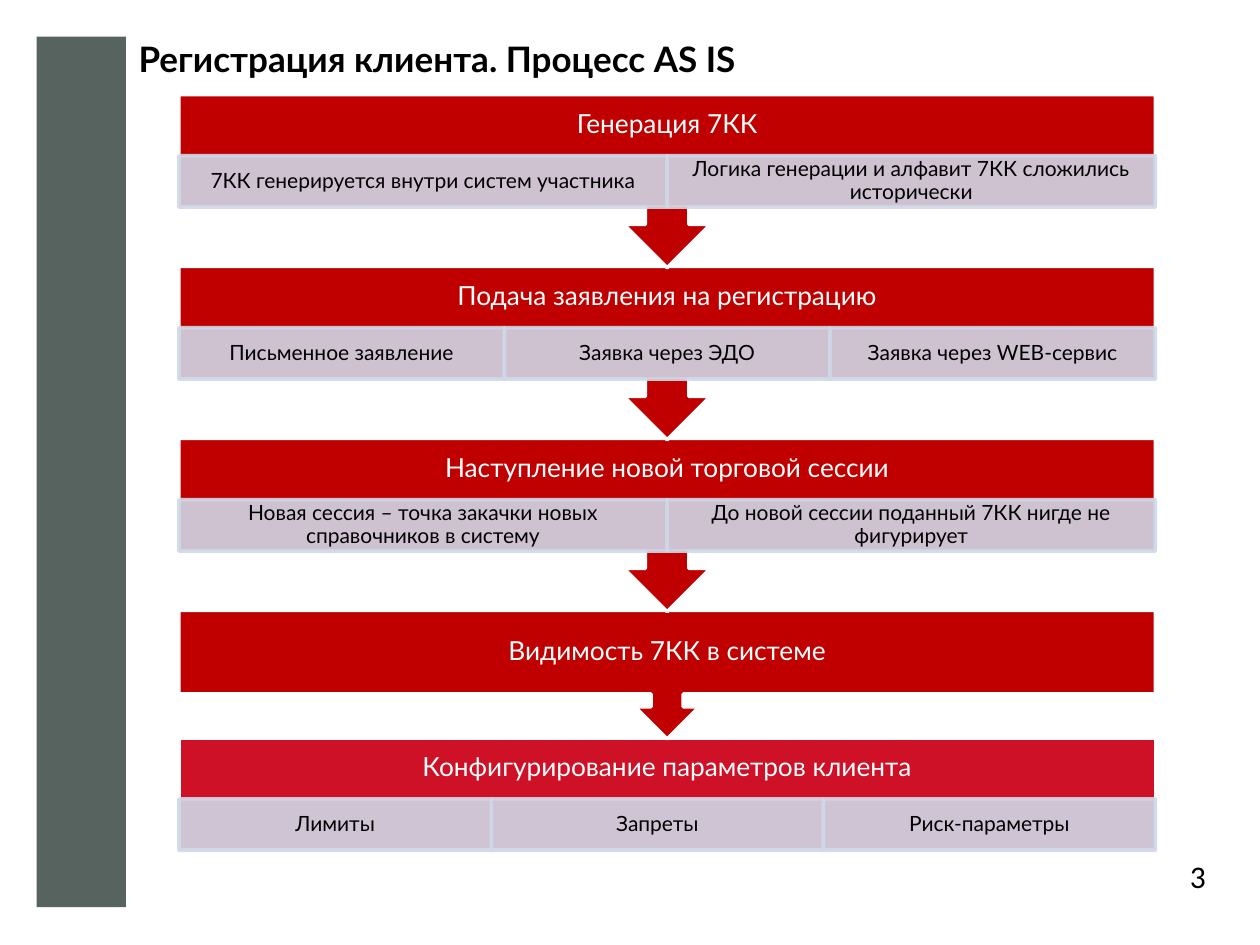
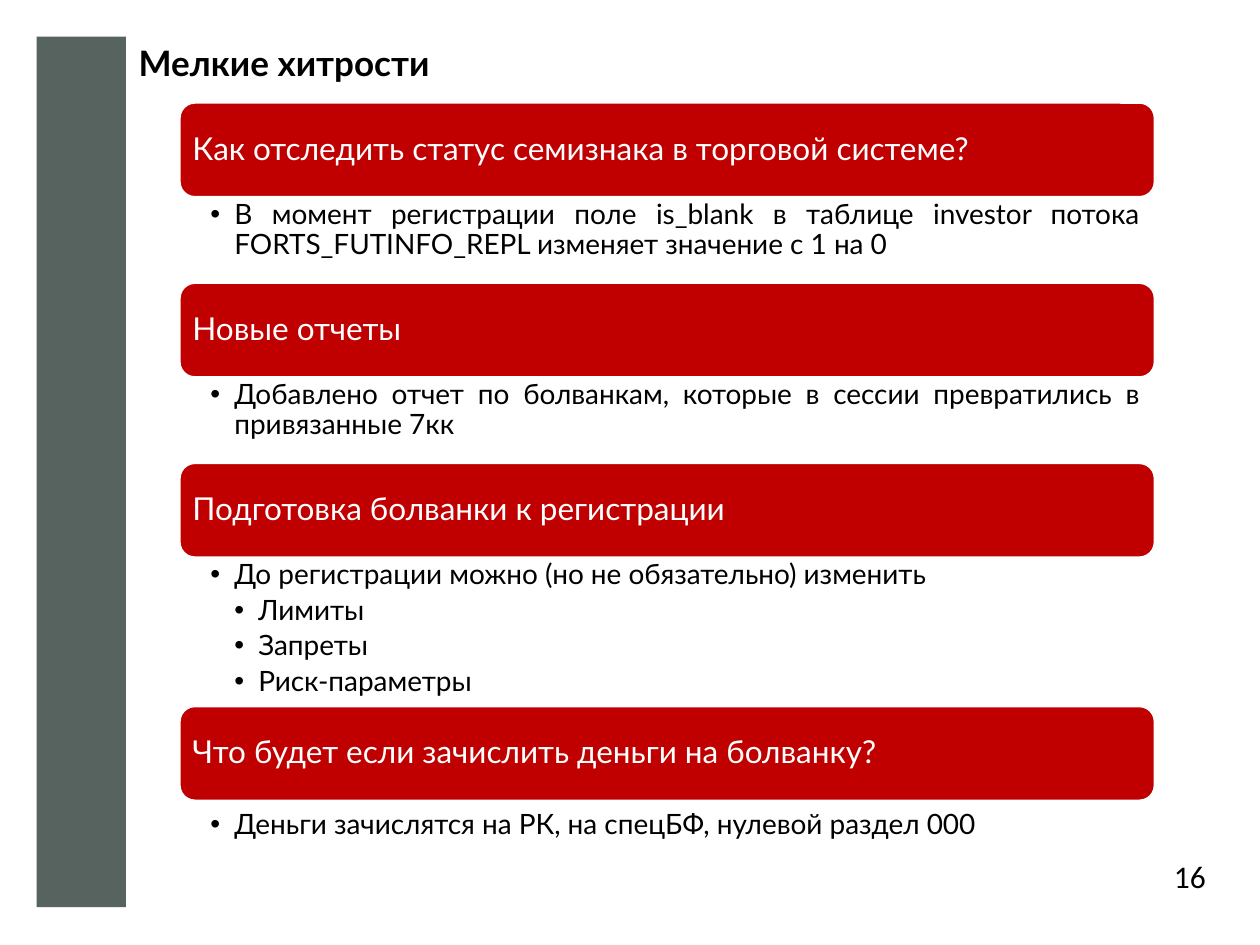
from pptx import Presentation
from pptx.dml.color import RGBColor
from pptx.enum.shapes import MSO_SHAPE as Shape
from pptx.enum.text import MSO_ANCHOR as Anchor, MSO_AUTO_SIZE as AutoSize, PP_ALIGN as Align
from pptx.oxml.ns import qn
from pptx.oxml.xmlchemy import OxmlElement
from pptx.util import Inches, Pt

BLACK = RGBColor(0x00, 0x00, 0x00)
WHITE = RGBColor(0xFF, 0xFF, 0xFF)
BAND = RGBColor(0x57, 0x63, 0x5E)
RED = RGBColor(0xC0, 0x00, 0x00)
CRIMSON = RGBColor(0xCE, 0x11, 0x26)
MIST = RGBColor(0xD0, 0xD8, 0xE8)

COLUMNS, ROWS = 100, 75
LEFT, WIDTH = 14.2, 77.5
HEADER_ROWS, DETAIL_ROWS = 4.85, 4.1
STEP_OVERLAP = 0.1
QUESTION_ROWS = 7.6

# (heading, fill, height in rows, [(detail, share of the width)])
STEPS = [
    ("Генерация 7КК", RED, 13.75, [
        ("7КК генерируется внутри систем участника", 1 / 2),
        ("Логика генерации и алфавит 7КК сложились исторически", 1 / 2)]),
    ("Подача заявления на регистрацию", RED, 13.75, [
        ("Письменное заявление", 1 / 3),
        ("Заявка через ЭДО", 1 / 3),
        ("Заявка через WEB-сервис", 1 / 3)]),
    ("Наступление новой торговой сессии", RED, 13.75, [
        ("Новая сессия – точка закачки новых справочников в систему", 1 / 2),
        ("До новой сессии поданный 7КК нигде не фигурирует", 1 / 2)]),
    ("Видимость 7КК в системе", RED, 10.2, []),
    ("Конфигурирование параметров клиента", CRIMSON, 8.9, [
        ("Лимиты", 0.32), ("Запреты", 0.34), ("Риск-параметры", 0.34)]),
]

# (question, gap before the answer, answer height, alignment, [(level, line)])
TIPS = [
    ("Как отследить статус семизнака в торговой системе?", 0, 6.7, Align.JUSTIFY, [
        (1, "В момент регистрации поле is_blank в таблице investor потока "
            "FORTS_FUTINFO_REPL изменяет значение с 1 на 0")]),
    ("Новые отчеты", 0, 6.7, Align.JUSTIFY, [
        (1, "Добавлено отчет по болванкам, которые в сессии превратились "
            "в привязанные 7кк")]),
    ("Подготовка болванки к регистрации", 0, 11.7, Align.LEFT, [
        (1, "До регистрации можно (но не обязательно) изменить"),
        (2, "Лимиты"), (2, "Запреты"), (2, "Риск-параметры")]),
    ("Что будет если зачислить деньги на болванку?", 0.5, 6.7, Align.LEFT, [
        (1, "Деньги зачислятся на РК, на спецБФ, нулевой раздел 000")]),
]


class Deck:
    font = "Lato"

    def __init__(self):
        self.prs = Presentation()
        self.prs.slide_width, self.prs.slide_height = Inches(10), Inches(7.5)
        self.slide = None

    def x(self, columns):
        return round(self.prs.slide_width * columns / COLUMNS)

    def y(self, rows):
        return round(self.prs.slide_height * rows / ROWS)

    def area(self, left, top, width, height):
        return self.x(left), self.y(top), self.x(width), self.y(height)

    def new_slide(self, title, title_top, number):
        self.slide = self.prs.slides.add_slide(self.prs.slide_layouts[5])
        self.block(Shape.RECTANGLE, (2.9, 2.9, 7.1, 69.1), BAND)
        heading = self.slide.shapes.title
        heading.left, heading.top, heading.width, heading.height = self.area(
            10, title_top, 90, 3.3)
        heading.text_frame.auto_size = AutoSize.NONE
        self.set_text(heading, [(0, title)], 20, BLACK, insets=(1, 0.5, 1, 0.5),
                      spacing=1, bold=True)
        self.text((91.7, 68.5, 4.3, 2.8), [(0, str(number))], 18,
                  align=Align.RIGHT, insets=(0, 0, 0.3, 0), spacing=Pt(18.1), font="Calibri")

    def block(self, kind, area, fill, line=None, opacity=None):
        shape = self.slide.shapes.add_shape(kind, *self.area(*area))
        shape.shadow.inherit = False
        shape.fill.solid()
        shape.fill.fore_color.rgb = fill
        if line is None:
            shape.line.fill.background()
        else:
            shape.line.color.rgb = line
            shape.line.width = Pt(2)
        if opacity is not None:
            for color in shape._element.spPr.iter(qn("a:srgbClr")):
                alpha = OxmlElement("a:alpha")
                alpha.set("val", str(opacity * 1000))
                color.append(alpha)
        return shape

    def text(self, area, lines, size, **style):
        box = self.slide.shapes.add_textbox(*self.area(*area))
        self.set_text(box, lines, size, BLACK, **style)

    def set_text(self, shape, lines, size, color, align=Align.LEFT, insets=(0, 0, 0, 0),
                 anchor=Anchor.TOP, spacing=0.9, font=None, bold=False):
        """Fill a shape with (level, line) pairs; levels above 0 are bulleted."""
        frame = shape.text_frame
        frame.word_wrap = True
        frame.vertical_anchor = anchor
        frame.margin_left, frame.margin_top = self.x(insets[0]), self.y(insets[1])
        frame.margin_right, frame.margin_bottom = self.x(insets[2]), self.y(insets[3])
        for index, (level, line) in enumerate(lines):
            paragraph = frame.add_paragraph() if index else frame.paragraphs[0]
            paragraph.text = line
            if level:
                self.bullet(paragraph, level)
                paragraph.space_after = Pt(3)
            paragraph.alignment = align
            paragraph.line_spacing = spacing
            paragraph.font.name = font or self.font
            paragraph.font.size = Pt(size)
            paragraph.font.bold = bold
            paragraph.font.color.rgb = color

    def bullet(self, paragraph, level):
        hang = self.x(1.9)
        paragraph.level = level
        properties = paragraph._p.get_or_add_pPr()
        properties.set("marL", str(hang * level))
        properties.set("indent", str(-hang))
        for tag, key, value in (("a:buFont", "typeface", "Arial"), ("a:buChar", "char", "•")):
            element = OxmlElement(tag)
            element.set(key, value)
            properties.append(element)

    def step(self, top, heading, fill, height, details, is_last):
        kind = Shape.RECTANGLE if is_last else Shape.DOWN_ARROW_CALLOUT
        panel = self.block(kind, (LEFT, top, WIDTH, height), fill, WHITE)
        self.set_text(panel, [(0, heading)], 15, WHITE, align=Align.CENTER,
                      insets=(1.2, 0, 1.2, DETAIL_ROWS if details else 0), anchor=Anchor.MIDDLE)
        left = LEFT
        for detail, share in details:
            width = WIDTH * share
            cell = self.block(Shape.RECTANGLE, (left, top + HEADER_ROWS, width, DETAIL_ROWS),
                              MIST, MIST, opacity=90)
            self.set_text(cell, [(0, detail)], 12, BLACK, align=Align.CENTER,
                          insets=(0.9, 0.2, 0.9, 0.2), anchor=Anchor.MIDDLE)
            left += width

    def tip(self, top, question, gap, height, align, answer):
        bar = self.block(Shape.ROUNDED_RECTANGLE, (LEFT, top, WIDTH, QUESTION_ROWS), RED, WHITE)
        self.set_text(bar, [(0, question)], 18, WHITE, insets=(0.7,) * 4, anchor=Anchor.MIDDLE)
        self.text((LEFT, top + QUESTION_ROWS + gap, WIDTH, height), answer, 16,
                  align=align, insets=(2.5, 0.2, 1.2, 0.2))


def registration_slide(deck):
    deck.new_slide("Регистрация клиента. Процесс AS IS", 2.5, 3)
    top, placed = 7.5, []
    for step in STEPS:
        placed.append((top, step))
        top += step[2] - STEP_OVERLAP
    # Later steps go first so that each arrow tip lies over the next heading.
    for top, step in reversed(placed):
        deck.step(top, *step, is_last=step is STEPS[-1])


def tips_slide(deck):
    deck.new_slide("Мелкие хитрости", 2.8, 16)
    top = 8.1
    for tip in TIPS:
        deck.tip(top, *tip)
        top += QUESTION_ROWS + tip[2]


def main():
    deck = Deck()
    registration_slide(deck)
    tips_slide(deck)
    deck.prs.save("out.pptx")


if __name__ == "__main__":
    main()
